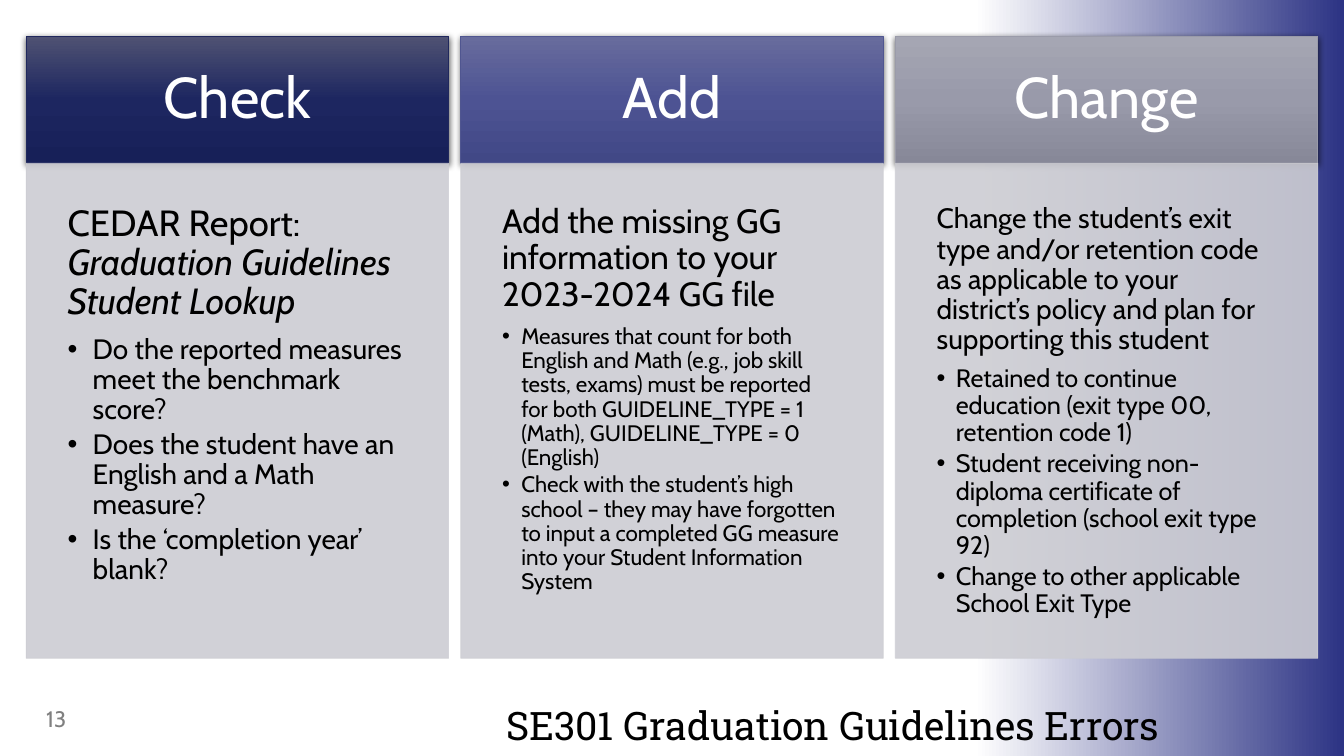
from lxml import etree
from pptx import Presentation
from pptx import util as u
from pptx.dml.color import RGBColor
from pptx.enum import shapes, text
from pptx.oxml import ns

COLORS = {
    "white": "FFFFFF", "black": "000000", "blue": "2C3384",
    "panel": "CDCDD3", "page": "808080",
}

# Column grid, in inches
LEFT, PITCH, WIDTH = 0.26, 4.31, 4.19
HEAD_TOP, HEAD_HEIGHT, PANEL_HEIGHT = 0.36, 1.26, 4.91

# Each lead is a list of (words, italic) pieces
COLUMNS = [
    {
        "heading": "Check", "shades": ["4F5273", "1D2660", "172058"], "edge": "20285D",
        "lead": [("CEDAR Report: ", False), ("Graduation Guidelines Student Lookup", True)],
        "lead_size": 26, "item_size": 20, "indent": 0.25,
        "items": [
            "Do the reported measures meet the benchmark score?",
            "Does the student have an English and a Math measure?",
            "Is the ‘completion year’ blank?",
        ],
    },
    {
        "heading": "Add", "shades": ["686C9D", "4D5393", "414886"], "edge": "505690",
        "lead": [("Add the missing GG information to your 2023-2024 GG file", False)],
        "lead_size": 24, "item_size": 16, "indent": 0.19,
        "items": [
            "Measures that count for both English and Math (e.g., job skill tests, exams) must be "
            "reported for both GUIDELINE_TYPE = 1 (Math), GUIDELINE_TYPE = 0 (English)",
            "Check with the student’s high school – they may have forgotten to input a "
            "completed GG measure into your Student Information System",
        ],
    },
    {
        "heading": "Change", "shades": ["A5A6B3", "999AAA", "878898"], "edge": "9A9BA9",
        "lead": [("Change the student’s exit type and/or retention code as applicable to your "
                  "district’s policy and plan for supporting this student", False)],
        "lead_size": 20, "item_size": 18, "indent": 0.19,
        "items": [
            "Retained to continue education (exit type 00, retention code 1)",
            "Student receiving non-diploma certificate of completion (school exit type 92)",
            "Change to other applicable School Exit Type",
        ],
    },
]


def rgb(value):
    return RGBColor.from_string(value)


def add_child(parent, tag, **attributes):
    child = etree.SubElement(parent, ns.qn(tag))
    for key, value in attributes.items():
        child.set(key, str(value))
    return child


def add_block(slide, left, top, width, height):
    block = slide.shapes.add_shape(
        shapes.MSO_SHAPE.RECTANGLE, *(u.Inches(n) for n in (left, top, width, height)))
    block.shadow.inherit = False
    return block


def set_gradient(block, shades, angle):
    block.fill.gradient()
    block.fill.gradient_angle = angle
    stops = block._element.spPr.find(ns.qn("a:gradFill")).find(ns.qn("a:gsLst"))
    for stop in list(stops):
        stops.remove(stop)
    for index, shade in enumerate(shades):
        stop = add_child(stops, "a:gs", pos=100000 * index // (len(shades) - 1))
        add_child(stop, "a:srgbClr", val=shade)


def set_line(block, color):
    block.line.color.rgb = rgb(color)
    block.line.width = u.Pt(0.5)


def set_shadow(block):
    effects = block._element.spPr.find(ns.qn("a:effectLst"))
    shadow = add_child(effects, "a:outerShdw", blurRad=u.Pt(4.5), dist=u.Pt(1.5),
                       dir=5400000, algn="ctr", rotWithShape=0)
    add_child(add_child(shadow, "a:srgbClr", val=COLORS["black"]), "a:alpha", val=63000)


def set_frame(frame, inset, anchor):
    frame.word_wrap = True
    frame.vertical_anchor = anchor
    frame.margin_left = frame.margin_right = u.Inches(inset)
    frame.margin_top = frame.margin_bottom = u.Inches(inset)


def style(paragraph, size, color, align=text.PP_ALIGN.LEFT, after=0, font="Cabin"):
    paragraph.alignment = align
    paragraph.line_spacing = 0.9
    paragraph.space_after = u.Pt(after)
    for run in paragraph.runs:
        run.font.size = u.Pt(size)
        run.font.name = font
        run.font.color.rgb = rgb(COLORS[color])


def set_bullet(paragraph, indent):
    properties = paragraph._p.get_or_add_pPr()
    properties.set("marL", str(u.Inches(indent)))
    properties.set("indent", str(-u.Inches(indent)))
    add_child(properties, "a:buFont", typeface="Arial")
    add_child(properties, "a:buChar", char="•")


def add_heading(slide, left, column):
    heading = add_block(slide, left, HEAD_TOP, WIDTH, HEAD_HEIGHT)
    set_gradient(heading, column["shades"], 270)
    set_line(heading, column["edge"])
    set_shadow(heading)
    set_frame(heading.text_frame, 0.33, text.MSO_ANCHOR.MIDDLE)
    heading.text_frame.text = column["heading"]
    style(heading.text_frame.paragraphs[0], 41, "white", text.PP_ALIGN.CENTER)


def add_panel(slide, left, column):
    panel = add_block(slide, left, HEAD_TOP + HEAD_HEIGHT, WIDTH, PANEL_HEIGHT)
    panel.fill.solid()
    panel.fill.fore_color.rgb = rgb(COLORS["panel"])
    set_line(panel, COLORS["panel"])
    for color in panel._element.spPr.iter(ns.qn("a:srgbClr")):
        add_child(color, "a:alpha", val=90000)

    frame = panel.text_frame
    set_frame(frame, 0.41, text.MSO_ANCHOR.TOP)
    lead = frame.paragraphs[0]
    for words, italic in column["lead"]:
        run = lead.add_run()
        run.text = words
        run.font.italic = italic
    style(lead, column["lead_size"], "black", after=0.35 * column["lead_size"])

    for words in column["items"]:
        item = frame.add_paragraph()
        item.text = words
        item.level = 1
        set_bullet(item, column["indent"])
        style(item, column["item_size"], "black", after=0.15 * column["item_size"])


def add_label(slide, place, words, inset, anchor, **look):
    label = slide.shapes.add_textbox(*(u.Inches(n) for n in place))
    set_frame(label.text_frame, inset, anchor)
    label.text_frame.text = words
    style(label.text_frame.paragraphs[0], **look)


def main():
    deck = Presentation()
    deck.slide_width, deck.slide_height = u.Inches(13.33), u.Inches(7.5)
    slide = deck.slides.add_slide(deck.slide_layouts[6])

    # Fading band on the right edge
    band = add_block(slide, 9.67, 0, 3.66, 7.5)
    set_gradient(band, [COLORS["white"], COLORS["blue"]], 0)
    band.line.fill.background()

    # Title
    add_label(slide, (4.26, 6.45, 7.24, 0.98), "SE301 Graduation Guidelines Errors", 0,
              text.MSO_ANCHOR.BOTTOM, size=28, color="black",
              align=text.PP_ALIGN.RIGHT, font="Roboto Slab")

    # Three columns
    for index, column in enumerate(COLUMNS):
        left = LEFT + index * PITCH
        add_heading(slide, left, column)
        add_panel(slide, left, column)

    # Page number
    add_label(slide, (0.36, 6.95, 3, 0.4), "13", 0.1, text.MSO_ANCHOR.MIDDLE,
              size=16, color="page")

    deck.save("out.pptx")


if __name__ == "__main__":
    main()
